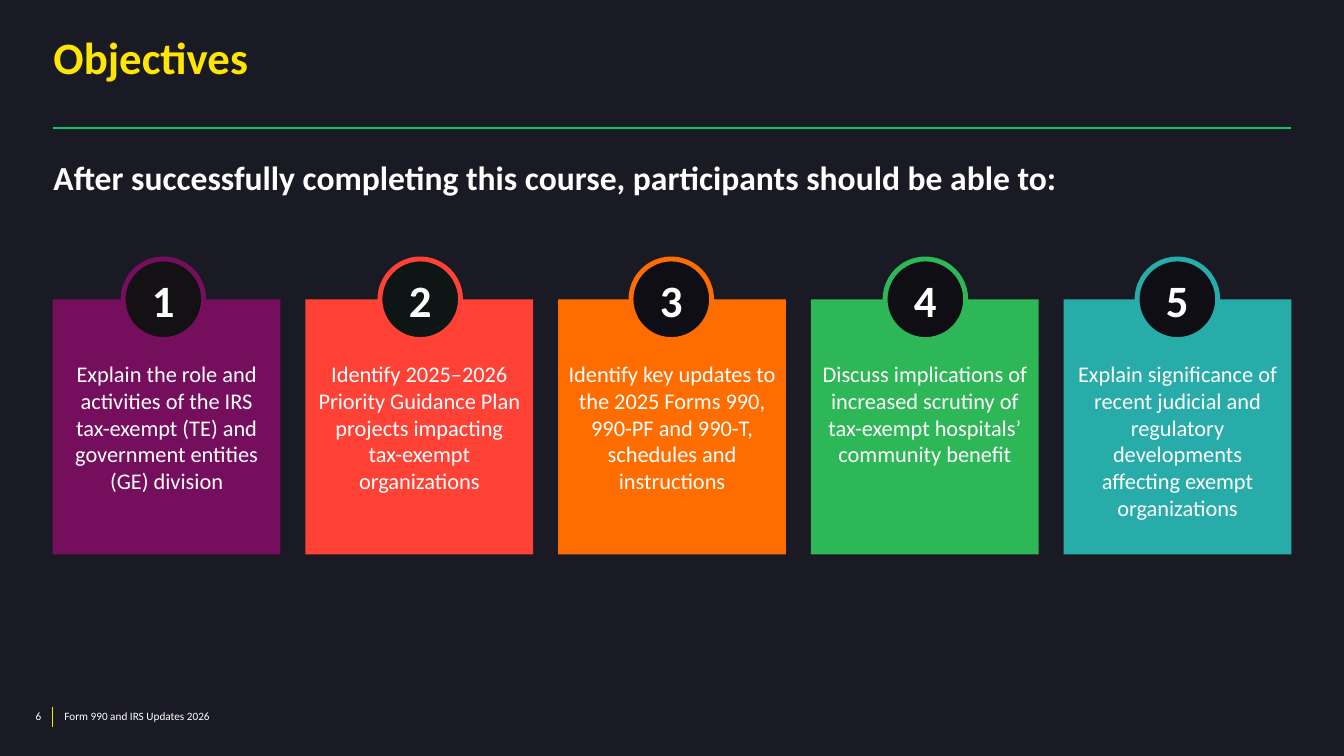
from lxml.etree import SubElement
from pptx import Presentation
from pptx.dml.color import RGBColor
from pptx.enum.shapes import MSO_CONNECTOR as Link, MSO_SHAPE as Form
from pptx.enum.text import MSO_ANCHOR as Anchor, MSO_AUTO_SIZE as Fit, PP_ALIGN as Align
from pptx.oxml.ns import qn
from pptx.util import Pt

NIGHT = RGBColor(0x1A, 0x1A, 0x24)
WHITE = RGBColor(0xFF, 0xFF, 0xFF)
YELLOW = RGBColor(0xFF, 0xE6, 0x00)
MINT = RGBColor(0x00, 0xC8, 0x64)
PLUM = RGBColor(0x75, 0x0E, 0x5C)
RED = RGBColor(0xFF, 0x41, 0x36)
ORANGE = RGBColor(0xFF, 0x6D, 0x00)
GREEN = RGBColor(0x2D, 0xB7, 0x57)
TEAL = RGBColor(0x27, 0xAC, 0xAA)
SOOT = RGBColor(0x14, 0x11, 0x15)
PINE = RGBColor(0x0E, 0x15, 0x15)
COAL = RGBColor(0x0E, 0x0E, 0x14)

LEFT, RIGHT = 37.7, 922.5
CARD_WIDE, CARD_HIGH, CARD_TOP = 162.7, 182.2, 213.9
STEP = (RIGHT - LEFT - CARD_WIDE) / 4
DISC, DISC_TOP = 57.6, 185

GOALS = [
    (PLUM, SOOT, 87.9, ["Explain the role and activities of the IRS tax-exempt (TE) and "
                        "government entities (GE) division"]),
    (RED, PINE, 271.4, ["Identify 2025–2026 Priority Guidance Plan projects impacting",
                        "tax-exempt organizations"]),
    (ORANGE, COAL, 450.7, ["Identify key updates to the 2025 Forms 990, 990-PF and 990-T, "
                           "schedules and instructions"]),
    (GREEN, COAL, 632.2, ["Discuss implications of increased scrutiny of",
                          "tax-exempt hospitals’ community benefit"]),
    (TEAL, COAL, 812.2, ["Explain significance of recent judicial and regulatory "
                         "developments affecting exempt organizations"]),
]


class Deck:
    face = "Calibri"

    def __init__(self, wide, high):
        self.show = Presentation()
        self.show.slide_width, self.show.slide_height = Pt(wide), Pt(high)
        self.slide = self.show.slides.add_slide(self.show.slide_layouts[5])
        fill = self.slide.background.fill
        fill.solid()
        fill.fore_color.rgb = NIGHT

    def apply(self, item, **values):
        for name, value in values.items():
            setattr(item, name, value)

    def fill_text(self, shape, lines, size, color=WHITE, bold=False, inset=(0, 0, 0, 0),
                  anchor=Anchor.TOP, **form):
        frame = shape.text_frame
        left, top, right, low = map(Pt, inset)
        self.apply(frame, margin_left=left, margin_top=top, margin_right=right,
                   margin_bottom=low, word_wrap=True, auto_size=Fit.NONE,
                   vertical_anchor=anchor)
        para = frame.paragraphs[0]
        self.apply(para, **form)
        for spot, line in enumerate(lines):
            if spot:
                para.add_line_break()
            run = para.add_run()
            run.text = line
            self.apply(run.font, name=self.face, size=Pt(size), bold=bold)
            run.font.color.rgb = color

    def title(self, place, line, **form):
        shape = self.slide.shapes.title
        left, top, wide, high = map(Pt, place)
        self.apply(shape, left=left, top=top, width=wide, height=high)
        self.fill_text(shape, [line], **form)

    def label(self, place, line, **form):
        box = self.slide.shapes.add_textbox(*map(Pt, place))
        self.fill_text(box, [line], **form)

    def shape(self, kind, place, fill, lines, edge=None, **form):
        shape = self.slide.shapes.add_shape(kind, *map(Pt, place))
        shape.shadow.inherit = False
        shape.fill.solid()
        shape.fill.fore_color.rgb = fill
        if edge is None:
            shape.line.fill.background()
        else:
            shape.line.color.rgb = edge
            shape.line.width = Pt(3.5)
        self.fill_text(shape, lines, alignment=Align.CENTER, **form)

    def rule(self, ends, color, width):
        rule = self.slide.shapes.add_connector(Link.STRAIGHT, *map(Pt, ends))
        rule.line.color.rgb = color
        rule.line.width = Pt(width)
        SubElement(rule._element.spPr, qn("a:effectLst"))


def main():
    deck = Deck(960, 540)
    deck.rule((LEFT, 504.7, LEFT, 519.1), YELLOW, 1)
    deck.label((38.9, 506.9, 432, 9.4), "Form 990 and IRS Updates 2026",
               size=8, inset=(7.2, 0, 0, 0))
    deck.label((7.9, 506.9, 28.8, 9.4), "6", size=8, inset=(0, 0, 7.2, 0),
               alignment=Align.RIGHT)
    deck.rule((LEFT, 91.4, RIGHT, 91.4), MINT, 2)
    deck.title((38.2, 27.4, 884.2, 36.7), "Objectives", size=32, color=YELLOW,
               bold=True, alignment=Align.LEFT, line_spacing=0.85)
    deck.label((38.2, 112.3, 884.2, 28.8),
               "After successfully completing this course, participants should be able to:",
               size=24, bold=True, space_after=Pt(12))
    for spot, (hue, core, left, lines) in enumerate(GOALS):
        deck.shape(Form.RECTANGLE, (LEFT + spot * STEP, CARD_TOP, CARD_WIDE, CARD_HIGH),
                   hue, lines, size=16, inset=(7.2, 43.2, 7.2, 0), space_after=Pt(6))
        deck.shape(Form.OVAL, (left, DISC_TOP, DISC, DISC), core, [str(spot + 1)],
                   edge=hue, size=32, bold=True, anchor=Anchor.MIDDLE)
    deck.show.save("out.pptx")


if __name__ == "__main__":
    main()
